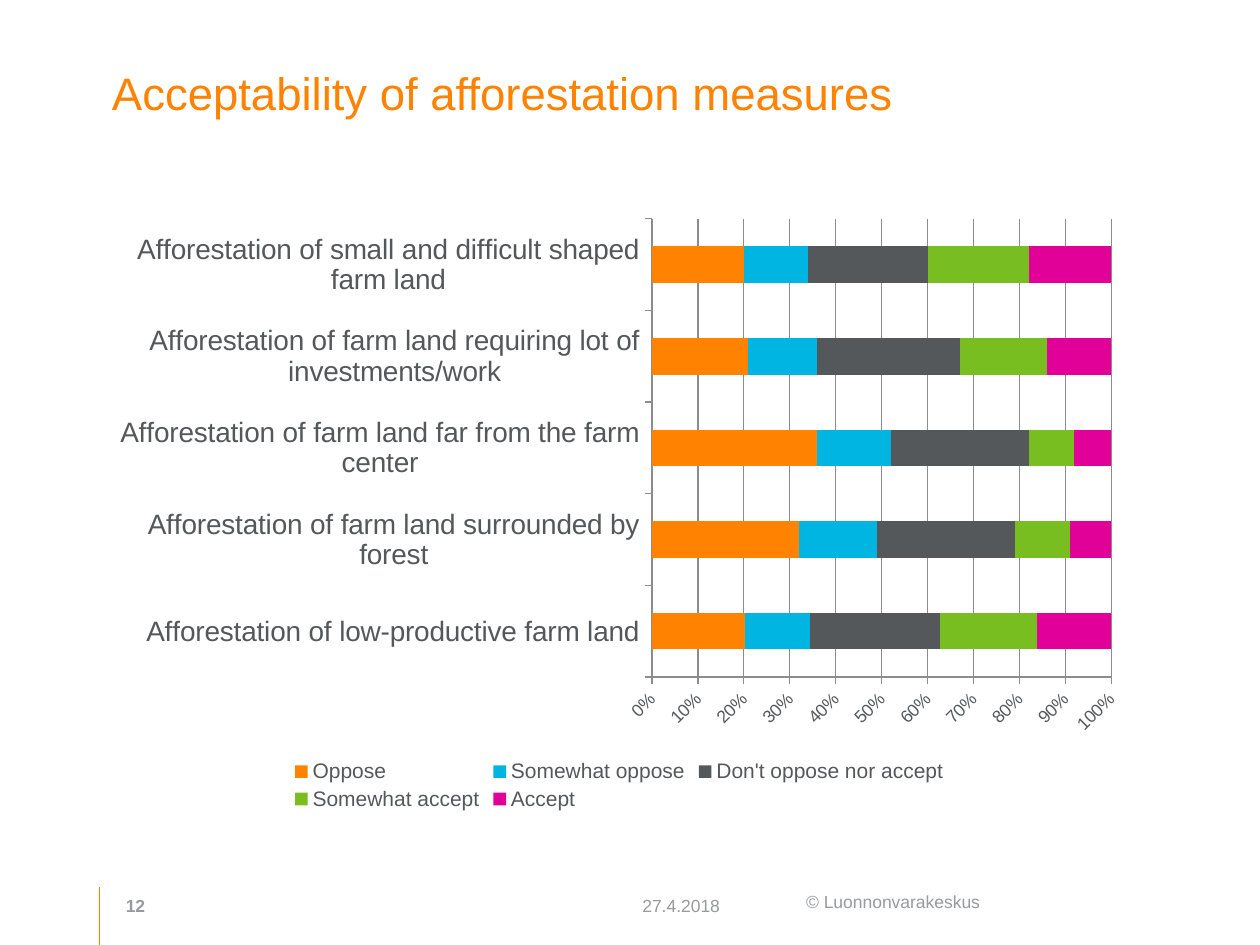
from pptx import Presentation
from pptx.chart.data import CategoryChartData
from pptx.dml.color import RGBColor
from pptx.enum.chart import XL_CHART_TYPE, XL_LEGEND_POSITION, XL_TICK_MARK
from pptx.enum.shapes import MSO_CONNECTOR
from pptx.enum.text import MSO_ANCHOR
from pptx.oxml.ns import qn
from pptx.util import Inches, Pt
from lxml import etree

BAR_STACKED_100 = XL_CHART_TYPE.BAR_STACKED_100
LEGEND_BOTTOM = XL_LEGEND_POSITION.BOTTOM
TICK_OUTSIDE = XL_TICK_MARK.OUTSIDE
TICK_NONE = XL_TICK_MARK.NONE
STRAIGHT = MSO_CONNECTOR.STRAIGHT
TOP, BOTTOM = MSO_ANCHOR.TOP, MSO_ANCHOR.BOTTOM

FONT = "Arial"
ORANGE = RGBColor(0xFF, 0x82, 0x00)
RULE_ORANGE = RGBColor(0xF9, 0x7F, 0x00)
BLUE = RGBColor(0x00, 0xB5, 0xE2)
DARK_GREY = RGBColor(0x54, 0x58, 0x5A)
GREEN = RGBColor(0x78, 0xBE, 0x20)
PINK = RGBColor(0xE1, 0x00, 0x98)
FOOTER_GREY = RGBColor(0x99, 0x9A, 0x9B)
COPYRIGHT_GREY = RGBColor(0x97, 0x9B, 0x9E)
AXIS_GREY = RGBColor(0x8C, 0x8C, 0x8C)

TEXTS = [
    ("Acceptability of afforestation measures", (0.79, 0.47, 8.25, 1.14), 26, ORANGE, False, TOP),
    ("© Luonnonvarakeskus", (6.3, 7.02, 1.94, 0.27), 10, COPYRIGHT_GREY, False, TOP),
    ("12", (0.9, 7.02, 0.49, 0.3), 10, FOOTER_GREY, True, BOTTOM),
    ("27.4.2018", (5, 7.02, 1.23, 0.3), 10, FOOTER_GREY, False, BOTTOM),
]
CHART_BOX = (0.79, 1.64, 8.25, 4.83)
MEASURES = [
    "Afforestation of low-productive farm land",
    "Afforestation of farm land surrounded by forest",
    "Afforestation of farm land far from the farm center",
    "Afforestation of farm land requiring lot of investments/work",
    "Afforestation of small and difficult shaped farm land",
]
ANSWERS = [
    ("Oppose", (20, 32, 36, 21, 20), ORANGE),
    ("Somewhat oppose", (14, 17, 16, 15, 14), BLUE),
    ("Don't oppose nor accept", (28, 30, 30, 31, 26), DARK_GREY),
    ("Somewhat accept", (21, 12, 10, 19, 22), GREEN),
    ("Accept", (16, 9, 8, 14, 18), PINK),
]


def style_font(font, size, color, bold=False):
    font.name = FONT
    font.size = Pt(size)
    font.color.rgb = color
    font.bold = bold


def style_line(line, color, width):
    line.color.rgb = color
    line.width = Pt(width)


def add_text(slide, text, box, size, color, bold, anchor):
    frame = slide.shapes.add_textbox(*map(Inches, box)).text_frame
    frame.word_wrap = True
    frame.vertical_anchor = anchor
    paragraph = frame.paragraphs[0]
    paragraph.text = text
    style_font(paragraph.font, size, color, bold)


def add_footer_rule(slide):
    x = Inches(0.79)
    rule = slide.shapes.add_connector(STRAIGHT, x, Inches(7.04), x, Inches(7.5))
    style_line(rule.line, RULE_ORANGE, 1)
    etree.SubElement(rule._element.spPr, qn("a:effectLst"))


def add_answer_chart(slide):
    data = CategoryChartData(number_format="General")
    data.categories = MEASURES
    for name, values, _ in ANSWERS:
        data.add_series(name, values)
    chart = slide.shapes.add_chart(BAR_STACKED_100, *map(Inches, CHART_BOX), data).chart
    style_font(chart.font, 10, DARK_GREY)
    chart.has_title = False

    plot = chart.plots[0]
    plot.gap_width = 150
    plot.overlap = 100
    plot.vary_by_categories = False
    for series, (_, _, color) in zip(plot.series, ANSWERS):
        series.format.fill.solid()
        series.format.fill.fore_color.rgb = color

    for axis, size in ((chart.category_axis, 16), (chart.value_axis, 10)):
        axis.major_tick_mark = TICK_OUTSIDE
        axis.minor_tick_mark = TICK_NONE
        style_line(axis.format.line, AXIS_GREY, 0.75)
        style_font(axis.tick_labels.font, size, DARK_GREY)
    value_axis = chart.value_axis
    value_axis.has_major_gridlines = True
    style_line(value_axis.major_gridlines.format.line, AXIS_GREY, 0.75)
    value_axis.tick_labels.number_format = "0%"
    value_axis.tick_labels.number_format_is_linked = False

    chart.has_legend = True
    chart.legend.position = LEGEND_BOTTOM
    chart.legend.include_in_layout = False
    style_font(chart.legend.font, 12, DARK_GREY)


def main():
    presentation = Presentation()
    presentation.slide_width = Inches(10)
    presentation.slide_height = Inches(7.5)
    slide = presentation.slides.add_slide(presentation.slide_layouts[6])
    add_footer_rule(slide)
    for text in TEXTS:
        add_text(slide, *text)
    add_answer_chart(slide)
    presentation.save("out.pptx")


if __name__ == "__main__":
    main()
